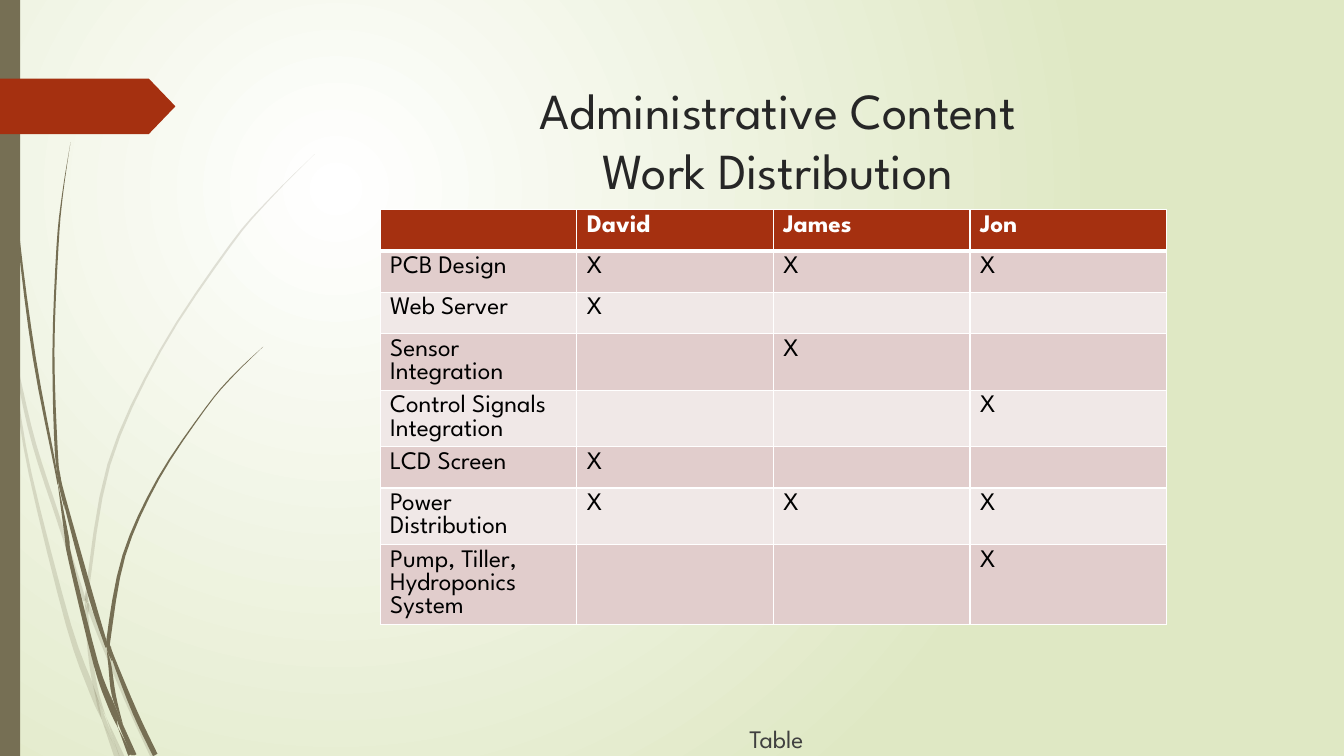
from dataclasses import dataclass
from math import hypot

from lxml.etree import SubElement
from pptx import Presentation
from pptx.dml.color import RGBColor
from pptx.enum.shapes import MSO_SHAPE as Shape
from pptx.enum.text import MSO_ANCHOR as Anchor, PP_ALIGN as Align
from pptx.oxml.ns import qn
from pptx.util import Inches, Pt


@dataclass(frozen=True)
class Theme:
    font: str = "League Spartan"
    title_size: int = 36
    text_size: int = 18
    white: str = "FFFFFF"
    black: str = "000000"
    title: str = "262626"
    caption: str = "404040"
    accent: str = "A53010"
    grass: str = "766F54"
    meadow: str = "DFE8C4"
    bands: tuple = ("E1CDCC", "F0E8E7")


THEME = Theme()
TITLE = "Administrative Content\vWork Distribution"
CAPTION = "Table"
MEMBERS = ["David", "James", "Jon"]
TASKS = [
    ("PCB Design", {"David", "James", "Jon"}),
    ("Web Server", {"David"}),
    ("Sensor Integration", {"James"}),
    ("Control Signals Integration", {"Jon"}),
    ("LCD Screen", {"David"}),
    ("Power Distribution", {"David", "James", "Jon"}),
    ("Pump, Tiller, Hydroponics System", {"Jon"}),
]
COLUMN_WIDTH, ROW_HEIGHT = 1.95, 0.41

# Each piece of a blade of grass: (x, y, width) along its centre line, in inches
FAINT_BLADES = [
    [(0, 2.9, .04), (.05, 3.17, .04), (.11, 3.5, 0)],
    [(.14, 3.45, 0), (.18, 3.72, .03), (.34, 4.41, .04), (.6, 5.21, .04),
     (.84, 5.96, .03)],
    [(.88, 5.98, 0), (.91, 6.1, .04), (1.25, 6.93, .04), (1.52, 7.51, .05)],
    [(1.05, 7.11, 0), (1.21, 7.51, .05)],
    [(.11, 3.5, 0), (.15, 3.8, .02), (.3, 4.7, .03), (.68, 6.2, .05),
     (.92, 6.87, .06), (1.01, 7.14, 0)],
    [(.84, 5.99, 0), (.86, 6.1, .03), (.89, 6.46, .04), (.95, 6.83, .04),
     (1.05, 7.11, 0)],
    [(3.12, 1.53, 0), (2.68, 1.97, .01), (2.28, 2.44, .02), (1.59, 3.48, .02),
     (1.08, 4.61, .03), (.87, 5.84, .03), (.88, 5.96, 0)],
    [(1.01, 7.14, 0), (1.16, 7.51, .05)],
    [(.85, 5.86, 0), (.86, 5.98, .04), (.88, 6.1, 0)],
    [(.93, 6.83, 0), (1.02, 7.11, .04), (1.19, 7.51, 0)],
]
SOLID_BLADES = [
    [(.04, 0, .01), (.08, 1.1, .01), (.18, 2.32, .02), (.34, 3.55, .03),
     (.55, 4.65, .02), (.57, 4.81, 0)],
    [(.6, 4.72, 0), (.63, 4.92, .03), (.9, 5.91, .05), (1.06, 6.42, .03)],
    [(1.1, 6.41, 0), (1.12, 6.52, .03), (1.34, 7.07, .05), (1.54, 7.49, .05)],
    [(.57, 4.77, 0), (.66, 5.31, .04), (.7, 5.56, .04), (.95, 6.58, .05),
     (1.1, 7, .06), (1.17, 7.22, 0)],
    [(.7, 1.41, 0), (.62, 1.93, .01), (.57, 2.45, .02), (.53, 3.49, .02),
     (.56, 4.51, .03), (.6, 4.72, 0)],
    [(1.22, 7.19, 0), (1.34, 7.49, .03)],
    [(.55, 4.49, 0), (.59, 4.77, .03), (.64, 5.05, 0)],
    [(2.61, 3.44, 0), (2.31, 3.73, .01), (2.04, 4.05, .01), (1.57, 4.75, .02),
     (1.23, 5.51, .03), (1.08, 6.32, .04), (1.1, 6.41, 0)],
    [(1.17, 7.22, 0), (1.29, 7.49, .04)],
    [(1.06, 6.45, 0), (1.09, 6.6, .03), (1.13, 6.9, .04), (1.22, 7.19, 0)],
    [(1.06, 6.31, 0), (1.08, 6.44, .04), (1.11, 6.56, 0)],
    [(1.1, 6.91, 0), (1.19, 7.17, .04), (1.32, 7.49, .03)],
]


def write(frame, text, size=THEME.text_size, color=THEME.black, bold=False,
          align=None):
    frame.word_wrap = True
    paragraph = frame.paragraphs[0]
    paragraph.text = text
    paragraph.alignment = align
    font = paragraph.font
    font.size, font.bold, font.name = Pt(size), bold, THEME.font
    font.color.rgb = RGBColor.from_string(color)
    for run in paragraph.runs:
        run.font.name = THEME.font


def paint(shape, color, alpha=100):
    shape.shadow.inherit = False
    shape.fill.solid()
    shape.fill.fore_color.rgb = RGBColor.from_string(color)
    shape.line.fill.background()
    if alpha < 100:
        fill_color = shape.element.spPr.find(".//" + qn("a:srgbClr"))
        SubElement(fill_color, qn("a:alpha"), val=str(alpha * 1000))


def smooth(knots, steps=4):
    """Sample a Catmull-Rom curve that passes through every knot."""
    padded = [knots[0], *knots, knots[-1]]
    curve = []
    for a, b, c, d in zip(padded, padded[1:], padded[2:], padded[3:]):
        for step in range(steps):
            t = step / steps
            curve.append([
                (2 * q + (r - p) * t + (2 * p - 5 * q + 4 * r - s) * t ** 2
                 + (3 * q - p - 3 * r + s) * t ** 3) / 2
                for p, q, r, s in zip(a, b, c, d)])
    return [*curve, knots[-1]]


def add_blade(shapes, knots, alpha):
    curve = smooth(knots)
    left, right = [], []
    for i, (x, y, width) in enumerate(curve):
        before, after = curve[max(i - 1, 0)], curve[min(i + 1, len(curve) - 1)]
        dx, dy = after[0] - before[0], after[1] - before[1]
        reach = width / 2 / hypot(dx, dy)
        left.append((Inches(x - dy * reach), Inches(y + dx * reach)))
        right.append((Inches(x + dy * reach), Inches(y - dx * reach)))
    start, *others = left + right[::-1]
    builder = shapes.build_freeform(*start)
    builder.add_line_segments(others, close=True)
    paint(builder.convert_to_shape(), THEME.grass, alpha)


def add_background(slide):
    fill = slide.background.fill
    fill.gradient()
    for stop, color in zip(fill.gradient_stops, (THEME.white, THEME.meadow)):
        stop.color.rgb = RGBColor.from_string(color)
    gradient = slide.element.find(".//" + qn("a:gradFill"))
    gradient.remove(gradient.find(qn("a:lin")))
    circle = SubElement(gradient, qn("a:path"), path="circle")
    SubElement(circle, qn("a:fillToRect"),
               l="50000", t="50000", r="100000", b="100000")


def format_cell(cell, text, fill, bottom=1, **text_format):
    write(cell.text_frame, text, **text_format)
    properties = cell._tc.get_or_add_tcPr()
    for side, width in (("L", 1), ("R", 1), ("T", 1), ("B", bottom)):
        border = SubElement(properties, qn(f"a:ln{side}"), w=str(Pt(width)))
        solid = SubElement(border, qn("a:solidFill"))
        SubElement(solid, qn("a:srgbClr"), val=THEME.white)
    cell.fill.solid()
    cell.fill.fore_color.rgb = RGBColor.from_string(fill)


def add_distribution(shapes):
    rows, columns = len(TASKS) + 1, len(MEMBERS) + 1
    table = shapes.add_table(
        rows, columns, Inches(3.77), Inches(2.08),
        Inches(columns * COLUMN_WIDTH), Inches(rows * ROW_HEIGHT)).table
    for column, heading in enumerate(["", *MEMBERS]):
        format_cell(table.cell(0, column), heading, THEME.accent, bottom=3,
                    color=THEME.white, bold=True)
    for row, (task, workers) in enumerate(TASKS, start=1):
        marks = ["X" if member in workers else "" for member in MEMBERS]
        for column, text in enumerate([task, *marks]):
            format_cell(table.cell(row, column), text, THEME.bands[(row - 1) % 2])


def main():
    deck = Presentation()
    deck.slide_width, deck.slide_height = Inches(13.33), Inches(7.5)
    slide = deck.slides.add_slide(deck.slide_layouts[5])
    shapes = slide.shapes
    add_background(slide)
    for blades, alpha in ((FAINT_BLADES, 20), (SOLID_BLADES, 100)):
        for knots in blades:
            add_blade(shapes, knots, alpha)

    side_bar = shapes.add_shape(Shape.RECTANGLE, 0, 0, Inches(0.2), Inches(7.5))
    paint(side_bar, THEME.grass)
    tag = shapes.add_shape(Shape.PENTAGON, 0, Inches(0.78), Inches(1.74), Inches(0.55))
    tag.adjustments[0] = 0.48
    paint(tag, THEME.accent)

    title = shapes.title
    title.left, title.top = Inches(2.84), Inches(0.68)
    title.width, title.height = Inches(9.75), Inches(1.4)
    title.text_frame.vertical_anchor = Anchor.MIDDLE
    write(title.text_frame, TITLE, size=THEME.title_size, color=THEME.title,
          align=Align.CENTER)
    add_distribution(shapes)
    caption = shapes.add_textbox(Inches(6.2), Inches(7.13), Inches(3), Inches(0.4))
    write(caption.text_frame, CAPTION, color=THEME.caption, align=Align.CENTER)
    deck.save("out.pptx")


if __name__ == "__main__":
    main()
